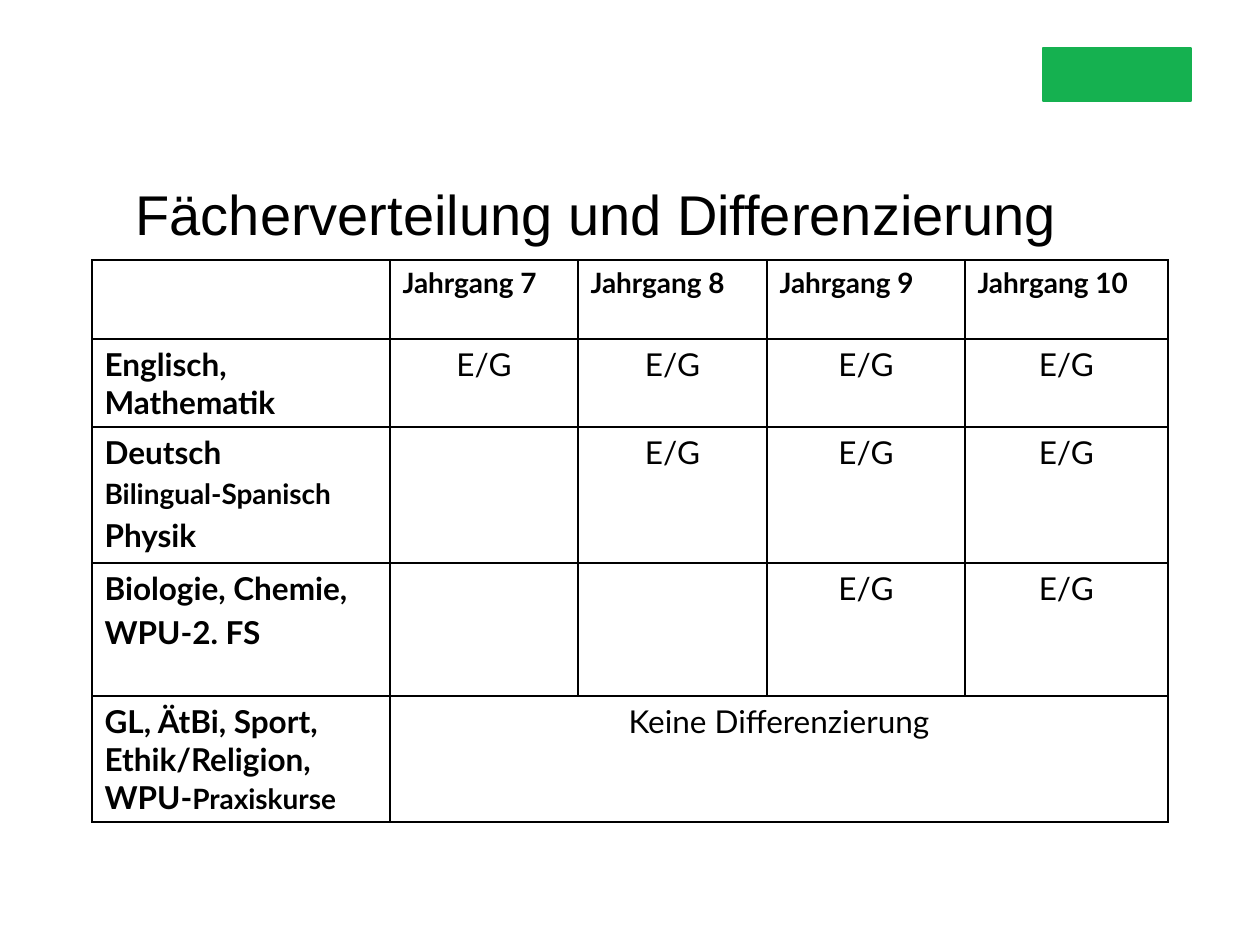
from lxml import etree
from pptx import Presentation
from pptx.dml.color import RGBColor
from pptx.enum.shapes import MSO_SHAPE
from pptx.enum.text import MSO_ANCHOR, PP_ALIGN
from pptx.oxml.ns import qn
from pptx.util import Emu, Pt

LEFT, CENTER = PP_ALIGN.LEFT, PP_ALIGN.CENTER
MIDDLE = MSO_ANCHOR.MIDDLE
RECTANGLE = MSO_SHAPE.RECTANGLE

BLACK = RGBColor(0x00, 0x00, 0x00)
GREEN = RGBColor(0x15, 0xB1, 0x50)

PX_PER_INCH = 126
SLIDE_SIZE = (1260, 945)
BADGE_BOX = (1043, 48, 148, 53)
TITLE_BOX = (123, 174, 1176, 86)
TABLE_ORIGIN = (92, 260)
COLUMN_WIDTHS = (298, 188, 189, 198, 203)
ROW_HEIGHTS = (79, 88, 136, 133, 126)
SPACE_SHARE = 0.2  # space before later paragraphs, as a share of the text size

TITLE = "Fächerverteilung und Differenzierung"
GRADES = ("Jahrgang 7", "Jahrgang 8", "Jahrgang 9", "Jahrgang 10")
LEVELS = "E/G"
NO_LEVELS = "Keine Differenzierung"
# Each subject cell is a list of paragraphs, each a list of (text, size) runs;
# the second entry is the number of grades without differentiation.
SUBJECTS = (
    ([[("Englisch, Mathematik", 18)]], 0),
    ([[("Deutsch", 18)], [("Bilingual-Spanisch", 16)], [("Physik", 18)]], 1),
    ([[("Biologie, Chemie,", 18)], [("WPU-2. FS", 18)]], 2),
    ([[("GL, ÄtBi, Sport, Ethik/Religion, WPU-", 18), ("Praxiskurse", 16)]], 4),
)


def px(length):
    return Emu(round(length * 914400 / PX_PER_INCH))


def add_run(paragraph, text, size, name, bold=False):
    run = paragraph.add_run()
    run.text = text
    font_format = {"size": Pt(size), "name": name, "bold": bold}
    for attribute, value in font_format.items():
        setattr(run.font, attribute, value)
    run.font.color.rgb = BLACK


def write_cell(cell, paragraphs, bold=False, alignment=LEFT):
    frame = cell.text_frame
    for index, runs in enumerate(paragraphs):
        paragraph = frame.add_paragraph() if index else frame.paragraphs[0]
        paragraph.alignment = alignment
        if index:
            paragraph.space_before = Pt(round(runs[0][1] * SPACE_SHARE, 1))
        for text, size in runs:
            add_run(paragraph, text, size, "Lato", bold)


def add_borders(cell):
    properties = cell._tc.get_or_add_tcPr()
    for side in ("a:lnL", "a:lnR", "a:lnT", "a:lnB"):
        line = etree.SubElement(properties, qn(side), w=str(Pt(1)))
        fill = etree.SubElement(line, qn("a:solidFill"))
        etree.SubElement(fill, qn("a:srgbClr"), val=str(BLACK))


def add_badge(slide):
    badge = slide.shapes.add_shape(RECTANGLE, *map(px, BADGE_BOX))
    badge.shadow.inherit = False
    badge.fill.solid()
    badge.fill.fore_color.rgb = GREEN
    badge.line.color.rgb = GREEN
    badge.line.width = Pt(1)


def add_title(slide):
    title = slide.shapes.title
    title.left, title.top, title.width, title.height = map(px, TITLE_BOX)
    title.text_frame.vertical_anchor = MIDDLE
    paragraph = title.text_frame.paragraphs[0]
    paragraph.alignment = LEFT
    paragraph.line_spacing = 0.9
    add_run(paragraph, TITLE, 32, "Arial")


def add_subject_table(slide):
    size = (sum(COLUMN_WIDTHS), sum(ROW_HEIGHTS))
    table = slide.shapes.add_table(
        len(ROW_HEIGHTS), len(COLUMN_WIDTHS), *map(px, TABLE_ORIGIN + size)
    ).table
    table.first_row = table.horz_banding = False
    for column, width in zip(table.columns, COLUMN_WIDTHS):
        column.width = px(width)
    for row, height in zip(table.rows, ROW_HEIGHTS):
        row.height = px(height)
    for cell in table.iter_cells():
        add_borders(cell)
        cell.fill.background()

    for column, grade in enumerate(GRADES, 1):
        write_cell(table.cell(0, column), [[(grade, 16)]], bold=True)
    for row, (subjects, undivided) in enumerate(SUBJECTS, 1):
        write_cell(table.cell(row, 0), subjects, bold=True)
        for column in range(undivided + 1, len(GRADES) + 1):
            write_cell(table.cell(row, column), [[(LEVELS, 18)]], alignment=CENTER)
        if undivided == len(GRADES):
            table.cell(row, 1).merge(table.cell(row, len(GRADES)))
            write_cell(table.cell(row, 1), [[(NO_LEVELS, 18)]], alignment=CENTER)


def main():
    presentation = Presentation()
    presentation.slide_width, presentation.slide_height = map(px, SLIDE_SIZE)
    slide = presentation.slides.add_slide(presentation.slide_layouts[5])
    add_badge(slide)
    add_title(slide)
    add_subject_table(slide)
    presentation.save("out.pptx")


if __name__ == "__main__":
    main()
